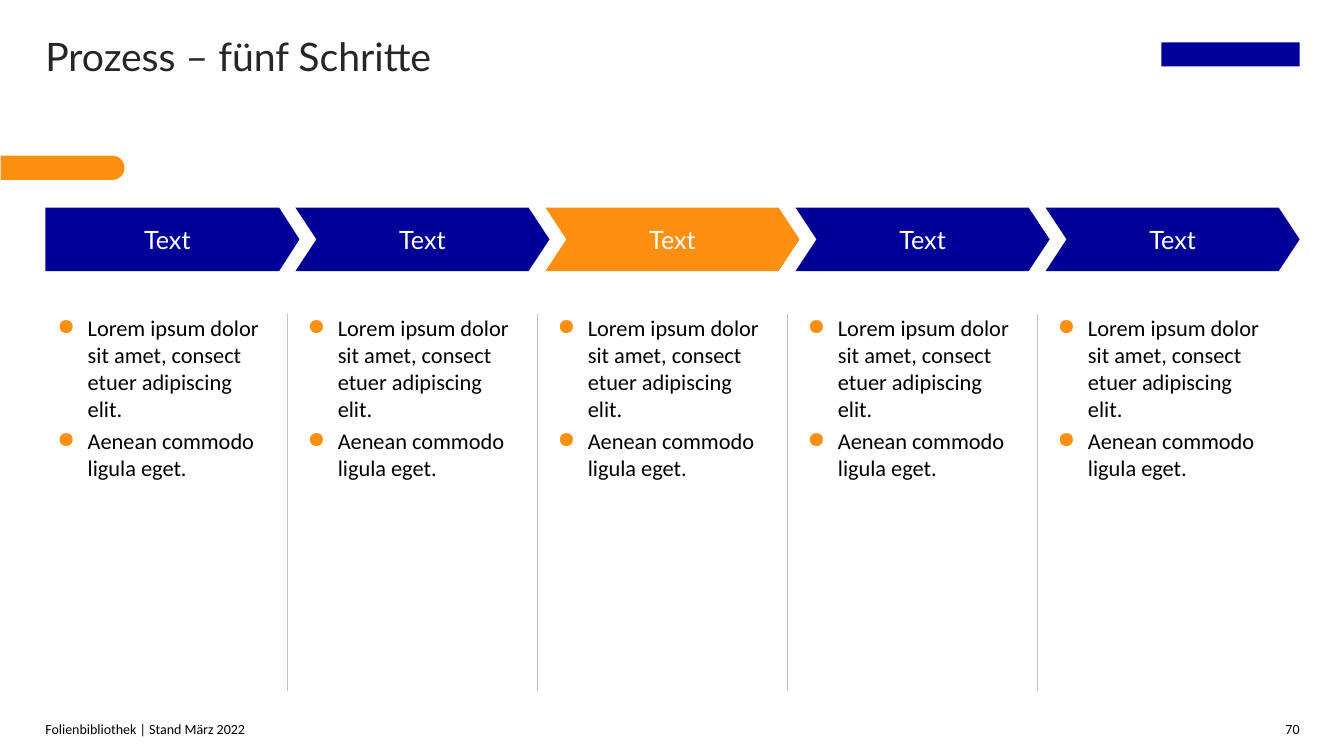
from lxml.etree import SubElement
from pptx import Presentation
from pptx.dml.color import RGBColor
from pptx.enum.shapes import MSO_CONNECTOR as Connector, MSO_SHAPE as Shape
from pptx.enum.text import MSO_ANCHOR as Anchor, PP_ALIGN as Align
from pptx.oxml.ns import qn
from pptx.util import Inches, Pt

NAVY, ORANGE, GRAY = "000099", "FE8F11", "BFBFBF"
BLACK, WHITE, CHARCOAL = "000000", "FFFFFF", "262626"
HEADING_FONT, BODY_FONT = "Lato", "Calibri"

LEFT, STEP_PITCH = 0.45, 2.48
STEP_TOP, STEP_WIDTH, STEP_HEIGHT = 2.06, 2.52, 0.63
COLUMN_TOP, COLUMN_WIDTH, COLUMN_HEIGHT = 3.12, 2.32, 3.74
DIVIDER_GAP = 0.08

STEPS = ["Text"] * 5
HIGHLIGHTED_STEP = 2
BULLETS = [
    "Lorem ipsum dolor sit amet, consect etuer adipiscing elit.",
    "Aenean commodo ligula eget.",
]


def color(value):
    return RGBColor.from_string(value)


class ProcessSlide:
    def __init__(self, presentation):
        self.slide = presentation.slides.add_slide(presentation.slide_layouts[6])

    def format_text(self, text_frame, size, font, text_color, align=Align.LEFT):
        for paragraph in text_frame.paragraphs:
            paragraph.alignment = align
            for run in paragraph.runs:
                run.font.size = Pt(size)
                run.font.name = font
                run.font.color.rgb = color(text_color)

    def text(self, box, text, size, font=BODY_FONT, text_color=BLACK,
             align=Align.LEFT, anchor=Anchor.TOP, side_inset=0, wrap=True):
        text_frame = self.slide.shapes.add_textbox(*map(Inches, box)).text_frame
        text_frame.word_wrap = wrap
        text_frame.vertical_anchor = anchor
        text_frame.margin_left = text_frame.margin_right = Inches(side_inset)
        text_frame.margin_top = text_frame.margin_bottom = 0
        text_frame.text = text
        self.format_text(text_frame, size, font, text_color, align)
        return text_frame

    def bullets(self, box, items):
        text_frame = self.text(box, "\n".join(items), 16, side_inset=0.12)
        for paragraph in text_frame.paragraphs:
            paragraph.level = 1
            paragraph.space_after = Pt(4)
            properties = paragraph._p.get_or_add_pPr()
            properties.set("marL", str(Inches(0.3)))
            properties.set("indent", str(Inches(-0.3)))
            bullet_color = SubElement(properties, qn("a:buClr"))
            SubElement(bullet_color, qn("a:srgbClr"), val=ORANGE)
            SubElement(properties, qn("a:buChar"), char="●")

    def shape(self, kind, box, fill, adjustments=()):
        shape = self.slide.shapes.add_shape(kind, *map(Inches, box))
        shape.shadow.inherit = False
        shape.fill.solid()
        shape.fill.fore_color.rgb = color(fill)
        shape.line.fill.background()
        for index, value in enumerate(adjustments):
            shape.adjustments[index] = value
        return shape

    def step(self, kind, box, fill, adjustment, label):
        shape = self.shape(kind, box, fill, [adjustment])
        shape.text_frame.text = label
        shape.text_frame.vertical_anchor = Anchor.MIDDLE
        self.format_text(shape.text_frame, 18, HEADING_FONT, WHITE, Align.CENTER)

    def divider(self, x, top, bottom):
        line = self.slide.shapes.add_connector(
            Connector.STRAIGHT, Inches(x), Inches(top), Inches(x), Inches(bottom))
        line.line.color.rgb = color(GRAY)
        line.line.width = Pt(1)
        SubElement(line._element.spPr, qn("a:effectLst"))


def main():
    presentation = Presentation()
    presentation.slide_width = Inches(13.33)
    presentation.slide_height = Inches(7.5)
    page = ProcessSlide(presentation)

    accent = page.shape(Shape.ROUND_2_SAME_RECTANGLE, (0.5, 1.05, 0.24, 1.23),
                        ORANGE, [0.5, 0])
    accent.rotation = 90
    page.shape(Shape.RECTANGLE, (11.52, 0.42, 1.37, 0.24), NAVY)

    page.text((LEFT, 0.32, 9.61, 0.55), "Prozess – fünf Schritte", 28,
              HEADING_FONT, CHARCOAL)
    page.text((LEFT, 7.16, 11.06, 0.16), "Folienbibliothek | Stand März 2022", 10,
              anchor=Anchor.BOTTOM)
    page.text((12.58, 7.16, 0.31, 0.16), "70", 10, align=Align.RIGHT,
              anchor=Anchor.BOTTOM, wrap=False)

    for index, label in enumerate(STEPS):
        x = LEFT + index * STEP_PITCH
        kind, adjustment = (Shape.CHEVRON, 0.33) if index else (Shape.PENTAGON, 0.32)
        fill = ORANGE if index == HIGHLIGHTED_STEP else NAVY
        page.step(kind, (x, STEP_TOP, STEP_WIDTH, STEP_HEIGHT), fill, adjustment, label)
        if index:
            page.divider(x - DIVIDER_GAP, COLUMN_TOP, COLUMN_TOP + COLUMN_HEIGHT)
        page.bullets((x, COLUMN_TOP, COLUMN_WIDTH, COLUMN_HEIGHT), BULLETS)

    presentation.save("out.pptx")


if __name__ == "__main__":
    main()
